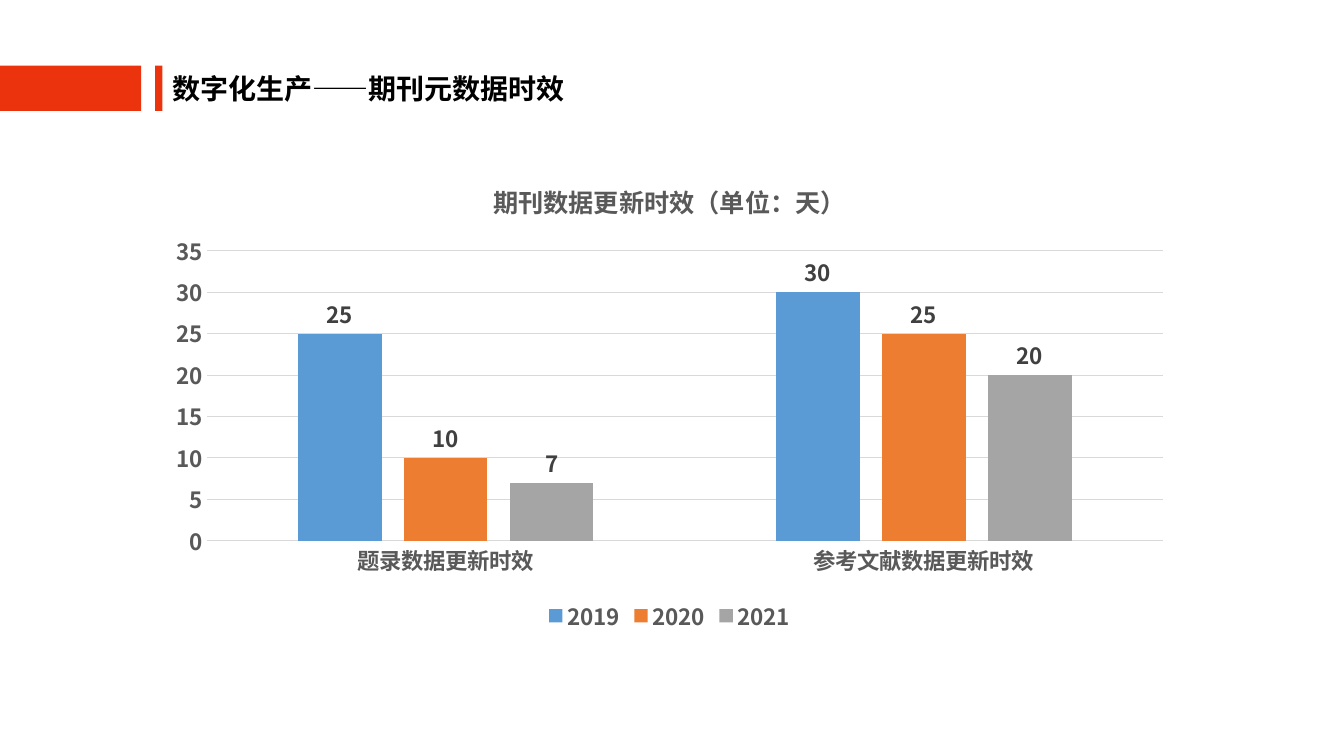
from lxml.etree import SubElement
from pptx import Presentation
from pptx.chart.data import CategoryChartData
from pptx.dml.color import RGBColor
from pptx.enum.chart import XL_CHART_TYPE, XL_LABEL_POSITION, XL_LEGEND_POSITION, XL_TICK_MARK
from pptx.enum.shapes import MSO_SHAPE
from pptx.oxml import parse_xml
from pptx.oxml.ns import nsdecls, qn
from pptx.util import Inches, Pt


def paint(target, color):
    target.solid()
    target.fore_color.rgb = RGBColor.from_string(color)


def write(text, frame=None, font=None, size=16, color="595959", bold=True, face="Noto Sans CJK SC"):
    if frame is not None:
        frame.text = text
        font = frame.paragraphs[0].runs[0].font
    font.size = Pt(size)
    font.bold = bold
    paint(font.fill, color)
    font.name = face
    SubElement(font._rPr, qn("a:ea")).set("typeface", face)


deck = Presentation()
deck.slide_width, deck.slide_height = Inches(13.33), Inches(7.5)
slide = deck.slides.add_slide(deck.slide_layouts[6])

for left, width in [(1.54, 0.07), (0, 1.4)]:
    bar = slide.shapes.add_shape(
        MSO_SHAPE.RECTANGLE, Inches(left), Inches(0.65), Inches(width), Inches(0.45))
    bar.shadow.inherit = False
    paint(bar.fill, "EB340D")
    bar.line.fill.background()

head = slide.shapes.add_textbox(Inches(1.61), Inches(0.66), Inches(5.05), Inches(0.77))
head.text_frame.word_wrap = True
write("数字化生产——期刊元数据时效", frame=head.text_frame, size=20, color="000000")

data = CategoryChartData()
data.categories = ["题录数据更新时效", "参考文献数据更新时效"]
for year, days in [("2019", (25, 30)), ("2020", (10, 25)), ("2021", (7, 20))]:
    data.add_series(year, days)
chart = slide.shapes.add_chart(
    XL_CHART_TYPE.COLUMN_CLUSTERED,
    Inches(1.54), Inches(1.59), Inches(10.2), Inches(4.72), data).chart

chart.has_title = True
write("期刊数据更新时效（单位：天）", frame=chart.chart_title.text_frame, size=18)
chart.chart_title.include_in_layout = False

chart.has_legend = True
chart.legend.position = XL_LEGEND_POSITION.BOTTOM
chart.legend.include_in_layout = False
write("", font=chart.legend.font)

days, group = chart.value_axis, chart.category_axis
for axis in (days, group):
    axis.major_tick_mark = axis.minor_tick_mark = XL_TICK_MARK.NONE
    write("", font=axis.tick_labels.font)
days.minimum_scale, days.maximum_scale, days.major_unit = 0, 35, 5
days.format.line.fill.background()
for line in (group.format.line, days.major_gridlines.format.line):
    paint(line.fill, "D9D9D9")
    line.width = Pt(0.75)

plot = chart.plots[0]
plot.gap_width, plot.overlap = 219, -27
plot.vary_by_categories = False
for series, color in zip(plot.series, ["5B9BD5", "ED7D31", "A5A5A5"]):
    paint(series.format.fill, color)
    labels = series.data_labels
    labels.show_value = True
    labels.position = XL_LABEL_POSITION.OUTSIDE_END
    write("", font=labels.font, color="404040")

area = chart._chartSpace.chart.plotArea
for old in area.findall(qn("c:layout")):
    area.remove(old)
sides = "".join(
    f'<c:{tag} val="{size}"/>'
    for tag, size in [("x", 0.05), ("y", 0.19), ("w", 0.93), ("h", 0.61)])
area.insert(0, parse_xml(
    f'<c:layout {nsdecls("c")}><c:manualLayout><c:layoutTarget val="inner"/>'
    f'<c:xMode val="edge"/><c:yMode val="edge"/>{sides}</c:manualLayout></c:layout>'))

deck.save("out.pptx")
